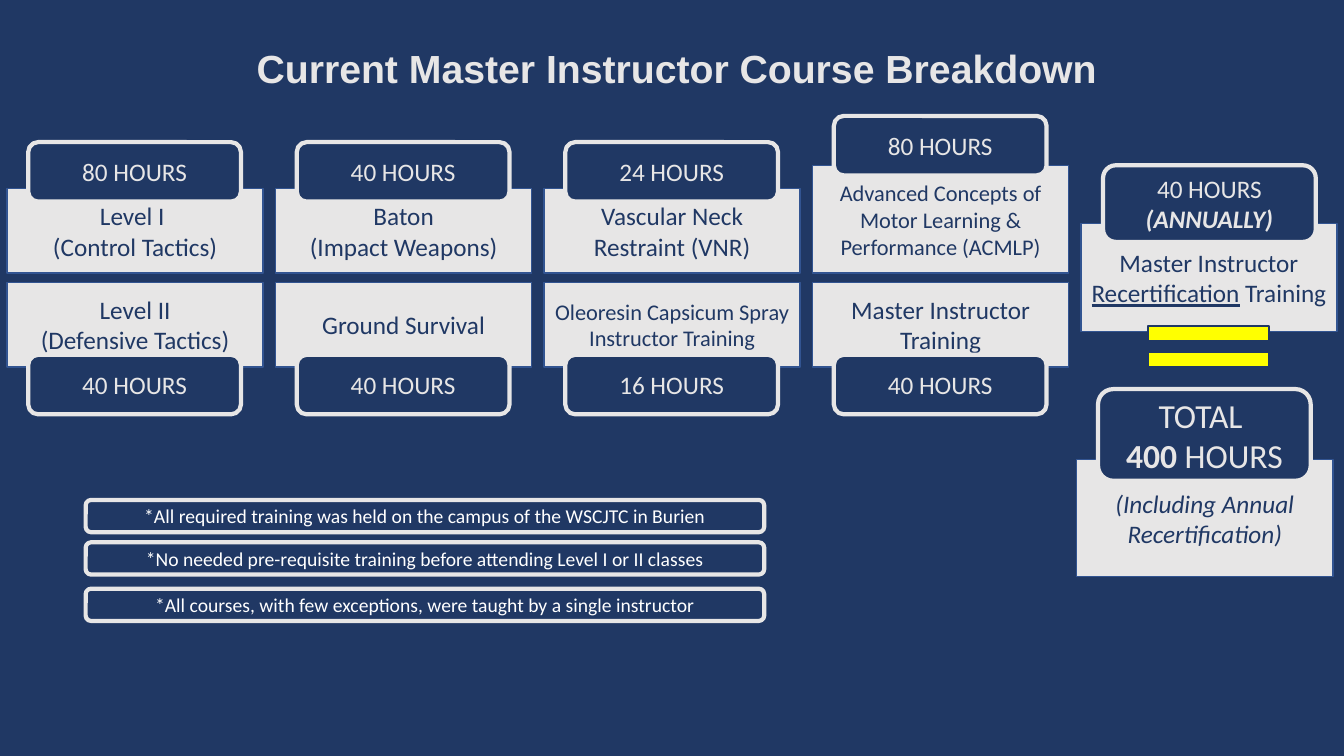
import pptx
import pptx.util
import pptx.dml.color
import pptx.enum.shapes
import pptx.enum.text

Inches = pptx.util.Inches
Pt = pptx.util.Pt
SHAPE = pptx.enum.shapes.MSO_SHAPE

NAVY, PALE, EDGE = "203864", "E7E6E6", "325491"
WHITE, YELLOW = "FFFFFF", "FFFF00"


def colour(value):
    return pptx.dml.color.RGBColor.from_string(value)


class CourseSlide:
    """Holds the style and the slide being built."""

    font = "Calibri"
    card_width, badge_width, badge_inset = 2.54, 2.11, 0.21

    def __init__(self, deck):
        self.slide = deck.slides.add_slide(deck.slide_layouts[5])
        background = self.slide.background.fill
        background.solid()
        background.fore_color.rgb = colour(NAVY)

    def group(self):
        return self.slide.shapes.add_group_shape().shapes

    def add_text(self, frame, runs, size, ink, font=None):
        """Each run is a string or a (string, styles) pair; newline breaks the line."""
        frame.word_wrap = True
        frame.vertical_anchor = pptx.enum.text.MSO_ANCHOR.MIDDLE
        paragraph = frame.paragraphs[0]
        paragraph.alignment = pptx.enum.text.PP_ALIGN.CENTER
        for item in runs:
            text, styles = (item, "") if isinstance(item, str) else item
            for number, line in enumerate(text.split("\n")):
                if number:
                    paragraph.add_line_break()
                if not line:
                    continue
                run = paragraph.add_run()
                run.text = line
                run.font.name = font or self.font
                run.font.size = Pt(size)
                run.font.color.rgb = colour(ink)
                run.font.bold = "b" in styles
                run.font.italic = "i" in styles
                run.font.underline = "u" in styles

    def title(self, text, left, top, width, height):
        heading = self.slide.shapes.title
        heading.left, heading.top = Inches(left), Inches(top)
        heading.width, heading.height = Inches(width), Inches(height)
        self.add_text(heading.text_frame, [(text, "b")], 28, PALE, "Arial")

    def box(self, shapes, kind, place, fill, line, weight):
        shape = shapes.add_shape(kind, *map(Inches, place))
        shape.shadow.inherit = False
        shape.fill.solid()
        shape.fill.fore_color.rgb = colour(fill)
        shape.line.color.rgb = colour(line)
        shape.line.width = Pt(weight)
        return shape

    def card(self, shapes, left, top, height, runs, size=18):
        place = (left, top, self.card_width, height)
        card = self.box(shapes, SHAPE.RECTANGLE, place, PALE, EDGE, 1)
        self.add_text(card.text_frame, runs, size, NAVY)

    def pill(self, shapes, place, runs, size, ink):
        pill = self.box(shapes, SHAPE.ROUNDED_RECTANGLE, place, NAVY, PALE, 3)
        self.add_text(pill.text_frame, runs, size, ink)

    def badge(self, shapes, card_left, top, height, runs, size=18):
        place = (card_left + self.badge_inset, top, self.badge_width, height)
        self.pill(shapes, place, runs, size, PALE)

    def bar(self, shapes, left, top):
        self.box(shapes, SHAPE.RECTANGLE, (left, top, 1.2, 0.15), YELLOW, NAVY, 1.5)


def main():
    deck = pptx.Presentation()
    deck.slide_width, deck.slide_height = Inches(13.33), Inches(7.5)
    page = CourseSlide(deck)
    page.title("Current Master Instructor Course Breakdown", 2.4, 0.39, 8.62, 0.57)

    # Annual recertification
    annual = page.group()
    page.card(annual, 10.72, 2.22, 1.07,
              ["Master Instructor ", ("Recertification", "u"), " Training"])
    page.badge(annual, 10.73, 1.64, 0.76, ["40 HOURS ", ("(ANNUALLY)", "bi")])

    # Course columns: (name, hours, text size) for the upper and lower card
    courses = [
        (("Level I \n(Control Tactics)", 80, 18),
         ("Level II\n(Defensive Tactics)", 40, 18)),
        (("Baton\n(Impact Weapons)", 40, 18),
         ("Ground Survival", 40, 18)),
        (("Vascular Neck Restraint (VNR)", 24, 18),
         ("Oleoresin Capsicum Spray Instructor Training", 16, 16)),
        (("Advanced Concepts of Motor Learning & Performance (ACMLP)", 80, 16),
         ("Master Instructor Training", 40, 18)),
    ]
    first_left, last_left = 0.07, 8.06
    pitch = (last_left - first_left) / (len(courses) - 1)
    upper_bottom, lower_top, card_height = 2.71, 2.8, 0.84
    for column, (upper, lower) in enumerate(courses):
        left = first_left + column * pitch
        is_last = column == len(courses) - 1
        upper_height = 1.07 if is_last else card_height
        upper_badge_top = 1.15 if is_last else 1.41
        shapes = page.group()
        rows = [(upper, upper_bottom - upper_height, upper_height, upper_badge_top),
                (lower, lower_top, card_height, 3.52)]
        for (name, hours, size), top, height, badge_top in rows:
            page.card(shapes, left, top, height, [name], size)
            page.badge(shapes, left, badge_top, 0.59, [f"{hours} HOURS"])

    # Total hours
    top_level = page.slide.shapes
    page.card(top_level, 10.68, 4.56, 1.16, [("(Including Annual Recertification)", "i")])
    page.badge(top_level, 10.68, 3.86, 0.91, ["TOTAL \n", ("400", "b"), " HOURS"], 24)

    # Equals sign
    equals = page.group()
    for bar_top in (3.23, 3.49):
        page.bar(equals, 11.39, bar_top)

    # Notes on the courses
    remarks = [
        (4.96, "*All required training was held on the campus of the WSCJTC in Burien"),
        (5.38, "*No needed pre-requisite training before attending Level I or II classes"),
        (5.84, "*All courses, with few exceptions, were taught by a single instructor"),
    ]
    for top, remark in remarks:
        page.pill(top_level, (0.85, top, 6.73, 0.32), [remark], 14, WHITE)

    deck.save("out.pptx")


if __name__ == "__main__":
    main()
